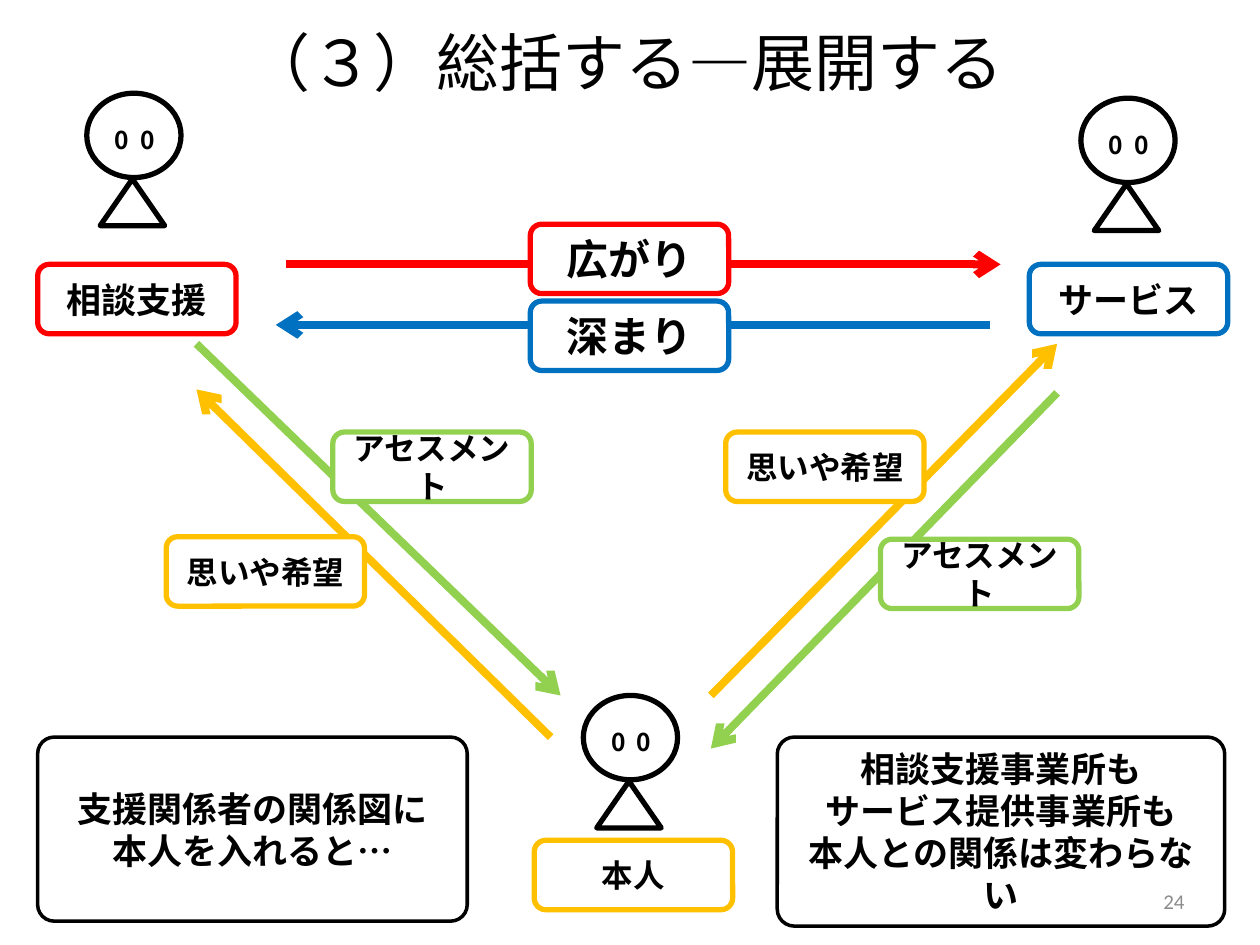
from lxml import etree
from pptx import Presentation
from pptx.dml.color import RGBColor
from pptx.enum.shapes import MSO_CONNECTOR, MSO_SHAPE
from pptx.enum.text import MSO_ANCHOR, MSO_AUTO_SIZE, PP_ALIGN
from pptx.oxml.ns import qn
from pptx.util import Cm, Pt

ROUND, OVAL = MSO_SHAPE.ROUNDED_RECTANGLE, MSO_SHAPE.OVAL
TRIANGLE = MSO_SHAPE.ISOSCELES_TRIANGLE
STRAIGHT, MIDDLE = MSO_CONNECTOR.STRAIGHT, MSO_ANCHOR.MIDDLE
CENTER, RIGHT = PP_ALIGN.CENTER, PP_ALIGN.RIGHT
BLACK, WHITE, GREY = "000000", "FFFFFF", "8C8C8C"
RED, BLUE, GREEN, GOLD = "FF0000", "0070C0", "92D050", "FFC000"
LATIN, EYES = "Calibri", "Noto Sans CJK JP"

# Content, in centimetres
TITLE = "（３）総括する―展開する"
PAGE = "24"
PEOPLE = [(1.75, 1.88), (21.79, 1.98), (11.76, 14.02)]  # left, top of head

# start, end, colour; the arrowhead is at the end
ARROWS = [
    ((3.96, 6.93), (11.3, 14.02), GREEN),
    ((11.1, 14.86), (3.96, 7.85), GOLD),
    ((14.33, 14.02), (21.31, 6.93), GOLD),
    ((21.31, 7.92), (14.33, 15.09), GREEN),
    ((5.77, 5.33), (20.17, 5.33), RED),
    ((19.96, 6.55), (5.56, 6.55), BLUE),
]

# text, left, top, colour, text size
LABELS = [
    ("本人", 10.77, 16.94, GOLD, 18),
    ("アセスメント", 17.75, 10.87, GREEN, 18),
    ("思いや希望", 3.35, 10.82, GOLD, 18),
    ("思いや希望", 14.63, 8.71, GOLD, 18),
    ("アセスメント", 6.71, 8.71, GREEN, 18),
    ("相談支援", 0.76, 5.33, RED, 20),
    ("サービス", 20.75, 5.33, BLUE, 20),
    ("深まり", 10.69, 6.07, BLUE, 24),
    ("広がり", 10.69, 4.52, RED, 24),
]
LABEL_SIZE = (4, 1.4)

# lines, box
NOTES = [
    (["相談支援事業所も", "サービス提供事業所も", "本人との関係は変わらない"],
     (15.67, 14.86, 9.02, 3.81)),
    (["支援関係者の関係図に", "本人を入れると…"], (0.76, 14.86, 8.66, 3.71)),
]


def rgb(code):
    return RGBColor.from_string(code)


def write(shape, lines, size, color=BLACK, bold=True, font=LATIN, align=CENTER):
    frame = shape.text_frame
    frame.text = "\n".join(lines)
    frame.word_wrap = True
    frame.auto_size = MSO_AUTO_SIZE.NONE
    frame.vertical_anchor = MIDDLE
    for para in frame.paragraphs:
        para.alignment = align
        para.font.size, para.font.bold = Pt(size), bold
        para.font.name, para.font.color.rgb = font, rgb(color)


def draw(kind, box, line=None, width=3, fill=None):
    shape = slide.shapes.add_shape(kind, *map(Cm, box))
    shape.shadow.inherit = False
    if fill:
        shape.fill.solid()
        shape.fill.fore_color.rgb = rgb(fill)
    else:
        shape.fill.background()
    if line:
        shape.line.color.rgb = rgb(line)
        shape.line.width = Pt(width)
    else:
        shape.line.fill.background()
    return shape


def person(x, y):
    draw(OVAL, (x, y, 1.9, 1.7), BLACK)
    draw(TRIANGLE, (x + 0.27, y + 1.73, 1.3, 0.94), BLACK)
    eyes = draw(ROUND, (x - 0.23, y + 0.13, 2.4, 1.6))
    write(eyes, ["0  0"], 14, font=EYES)


def arrow(start, end, color):
    link = slide.shapes.add_connector(STRAIGHT, *map(Cm, start + end))
    link.line.color.rgb = rgb(color)
    link.line.width = Pt(4.5)
    tip = etree.SubElement(link.line._get_or_add_ln(), qn("a:tailEnd"))
    tip.set("type", "arrow")
    etree.SubElement(link._element.spPr, qn("a:effectLst"))


prs = Presentation()
prs.slide_width, prs.slide_height = Cm(25.4), Cm(19.05)
slide = prs.slides.add_slide(prs.slide_layouts[5])

# Title
title = slide.shapes.title
title.left, title.top, title.width, title.height = map(Cm, (3.51, 0.24, 18.19, 2))
write(title, [TITLE], 36, bold=False)

# Arrows go behind the labels
for item in ARROWS:
    arrow(*item)
for spot in PEOPLE:
    person(*spot)
for text, x, y, color, size in LABELS:
    label = draw(ROUND, (x, y, *LABEL_SIZE), color, fill=WHITE)
    write(label, [text], size)

# Notes at the bottom
for lines, box in NOTES:
    note = draw(ROUND, box, BLACK, 2, WHITE)
    note.adjustments[0] = 0.09
    write(note, lines, 20)

# Page number
page = slide.shapes.add_textbox(*map(Cm, (18.21, 17.65, 5.92, 1.02)))
write(page, [PAGE], 12, GREY, False, align=RIGHT)

prs.save("out.pptx")
